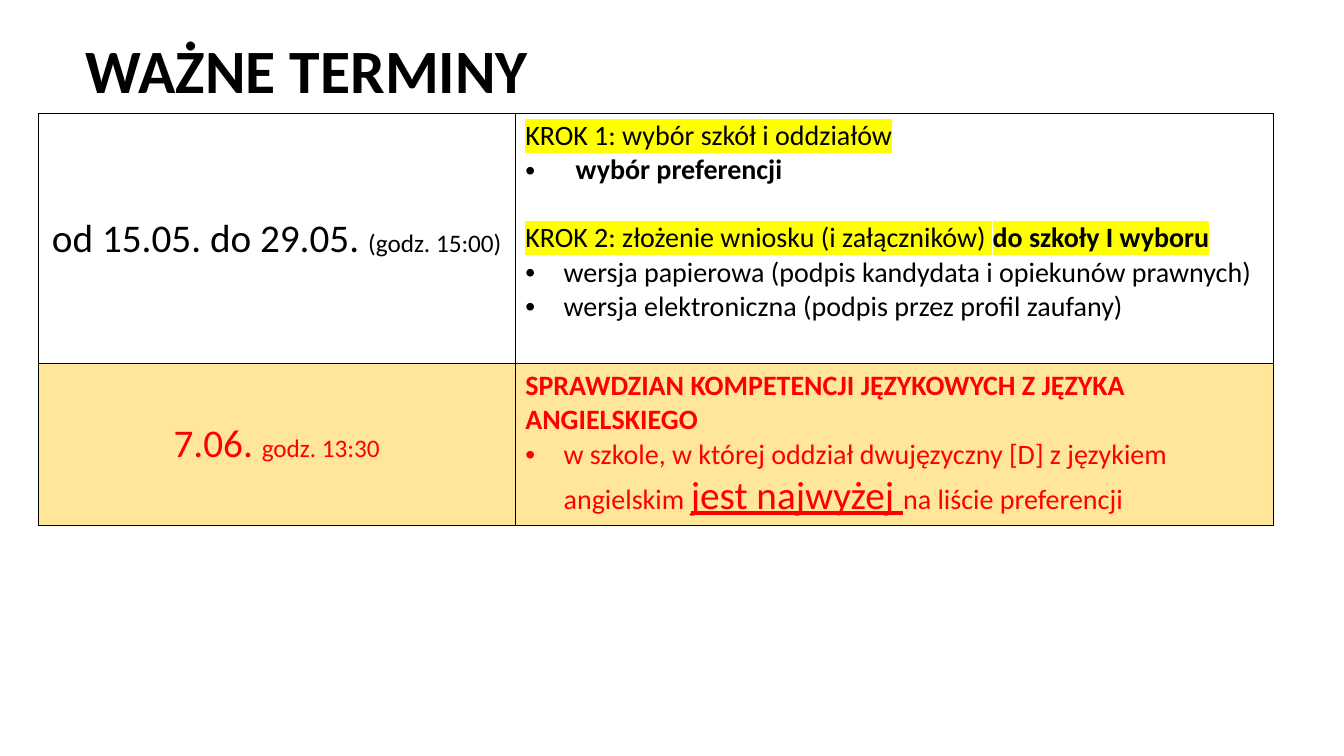
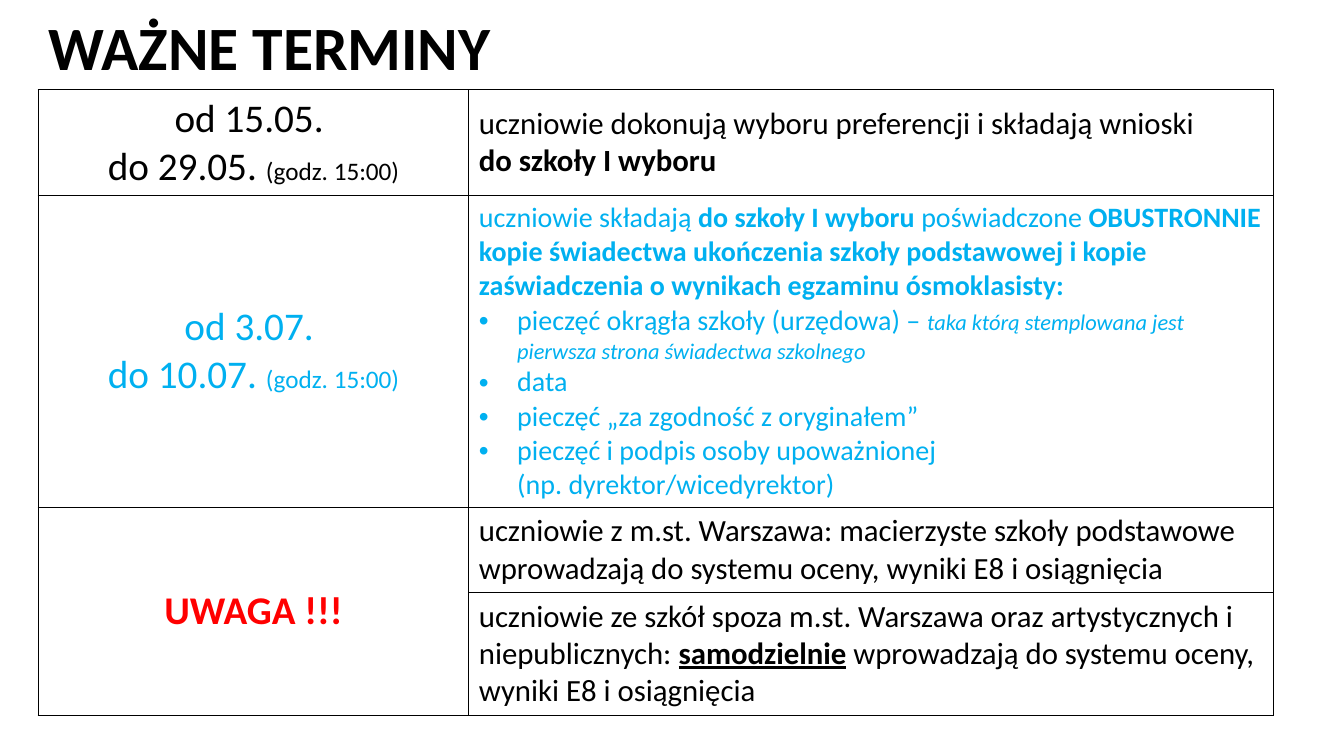
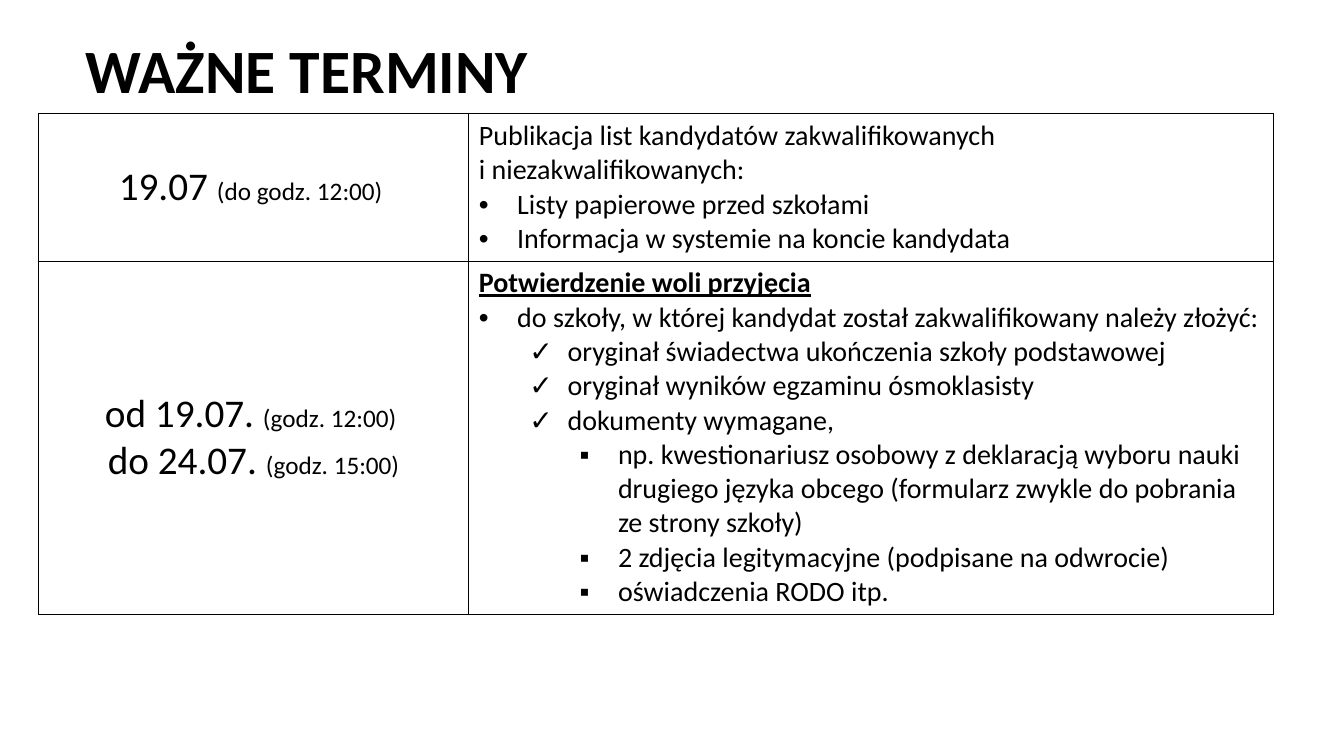
from dataclasses import dataclass

from lxml import etree
from pptx import Presentation
from pptx.dml.color import RGBColor
from pptx.enum.text import MSO_ANCHOR, PP_ALIGN
from pptx.oxml.ns import qn
from pptx.util import Inches, Pt

BLACK = RGBColor(0x00, 0x00, 0x00)
RED = RGBColor(0xFF, 0x00, 0x00)
BLUE = RGBColor(0x00, 0xB0, 0xF0)
SAND = RGBColor(0xFF, 0xE6, 0x99)
YELLOW = RGBColor(0xFF, 0xFF, 0x00)
LEFT, CENTER = PP_ALIGN.LEFT, PP_ALIGN.CENTER
TOP, MIDDLE = MSO_ANCHOR.TOP, MSO_ANCHOR.MIDDLE
FONT = "Calibri"
TITLE = "WAŻNE TERMINY"
TITLE_ONLY = 5
TABLE_LEFT, TABLE_WIDTH = 0.38, 12.25


@dataclass
class Para:
    """Paragraph made of (text, size, flags) runs; flags are b, i, u and h for highlight."""
    runs: list
    bullet: str = ""
    level: int = 0
    hang: float = 0.38
    before: int = 0


@dataclass
class Cell:
    """Table cell with its paragraphs and look."""
    paras: list
    color: RGBColor = BLACK
    fill: RGBColor = None
    align: PP_ALIGN = LEFT
    anchor: MSO_ANCHOR = MIDDLE


def line(text, size=20, flags=""):
    """Return a paragraph of one run."""
    return Para([(text, size, flags)])


def item(text, bullet="•", level=0):
    """Return a bulleted paragraph of one run."""
    return Para([(text, 20, "")], bullet, level)


def date(*parts, color=BLACK, fill=None):
    """Return a date cell from alternating large and small parts."""
    runs = [(text, 18 if i % 2 else 28, "") for i, text in enumerate(parts)]
    return Cell([Para(runs)], color, fill, CENTER)


class Deck:
    """Style of the deck and its current slide."""

    def __init__(self):
        self.prs = Presentation()
        self.prs.slide_width, self.prs.slide_height = Inches(13.33), Inches(7.5)
        self.s = None

    def slide(self, left=0.75, top=0):
        """Add a slide with its title."""
        self.s = self.prs.slides.add_slide(self.prs.slide_layouts[TITLE_ONLY])
        sp = self.s.shapes.title
        sp.left, sp.top = Inches(left), Inches(top)
        sp.width, sp.height = Inches(11.5), Inches(1.45)
        sp.text_frame.vertical_anchor = MIDDLE
        p = sp.text_frame.paragraphs[0]
        p.alignment, p.line_spacing = LEFT, 0.9
        self.run(p, TITLE, 44, "b", BLACK)

    def run(self, p, text, size, flags, color):
        """Add a run, turning newlines into line breaks."""
        for i, part in enumerate(text.split("\n")):
            if i:
                p.add_line_break()
            if not part:
                continue
            r = p.add_run()
            r.text = part
            font = r.font
            font.name, font.size = FONT, Pt(size)
            font.bold, font.italic, font.underline = (f in flags for f in "biu")
            font.color.rgb = color
            if "h" in flags:
                mark = etree.Element(qn("a:highlight"))
                etree.SubElement(mark, qn("a:srgbClr"), val=str(YELLOW))
                r._r.get_or_add_rPr().find(qn("a:solidFill")).addnext(mark)

    def paragraph(self, p, para, cell):
        """Fill one paragraph of a cell."""
        p.alignment, p.level = cell.align, para.level
        p.space_before = Pt(para.before)
        if para.bullet:
            pPr = p._p.get_or_add_pPr()
            pPr.set("marL", str(Inches(para.hang + 0.5 * para.level)))
            pPr.set("indent", str(-Inches(para.hang)))
            etree.SubElement(pPr, qn("a:buFont"), typeface="Arial")
            etree.SubElement(pPr, qn("a:buChar"), char=para.bullet)
        for text, size, flags in para.runs:
            self.run(p, text, size, flags, cell.color)

    def borders(self, target):
        """Draw thin black lines around a cell."""
        tcPr = target._tc.get_or_add_tcPr()
        for side in ("lnL", "lnR", "lnT", "lnB"):
            ln = etree.SubElement(tcPr, qn(f"a:{side}"), w=str(Pt(1)))
            fill = etree.SubElement(ln, qn("a:solidFill"))
            etree.SubElement(fill, qn("a:srgbClr"), val=str(BLACK))

    def table(self, top, date_width, heights, rows):
        """Add a two-column table; None continues the cell above."""
        frame = self.s.shapes.add_table(
            len(rows), 2, Inches(TABLE_LEFT), Inches(top),
            Inches(TABLE_WIDTH), Inches(sum(heights)))
        table = frame.table
        table.first_row = table.horz_banding = False
        for column, width in zip(table.columns, (date_width, TABLE_WIDTH - date_width)):
            column.width = Inches(width)
        for i, (height, row) in enumerate(zip(heights, rows)):
            table.rows[i].height = Inches(height)
            for j, cell in enumerate(row):
                target = table.cell(i, j)
                self.borders(target)
                if cell is None:
                    table.cell(i - 1, j).merge(target)
                else:
                    self.cell(target, cell)

    def cell(self, target, cell):
        """Fill a table cell."""
        if cell.fill is None:
            target.fill.background()
        else:
            target.fill.solid()
            target.fill.fore_color.rgb = cell.fill
        target.vertical_anchor = cell.anchor
        tf = target.text_frame
        for i, para in enumerate(cell.paras):
            self.paragraph(tf.add_paragraph() if i else tf.paragraphs[0], para, cell)


def main():
    """Build the deck."""
    deck = Deck()

    deck.slide()
    deck.table(1.13, 4.73, (2.48, 1.6), [
        (date("od 15.05. do 29.05. ", "(godz. 15:00)"),
         Cell([
             line("KROK 1: wybór szkół i oddziałów", flags="h"),
             Para([("wybór preferencji", 20, "b")], "•", hang=0.5),
             Para([("KROK 2: złożenie wniosku (i załączników) ", 20, "h"),
                   ("do szkoły I wyboru", 20, "bh")], before=24),
             item("wersja papierowa (podpis kandydata i opiekunów prawnych)"),
             item("wersja elektroniczna (podpis przez profil zaufany)"),
         ], anchor=TOP)),
        (date("7.06. ", "godz. 13:30", color=RED, fill=SAND),
         Cell([
             line("SPRAWDZIAN KOMPETENCJI JĘZYKOWYCH Z JĘZYKA ANGIELSKIEGO", flags="b"),
             Para([("w szkole, w której oddział dwujęzyczny [D] z językiem angielskim ", 20, ""),
                   ("jest najwyżej ", 28, "u"),
                   ("na liście preferencji", 20, "")], "•"),
         ], RED, SAND, anchor=TOP)),
    ])

    deck.slide(0.38, -0.22)
    deck.table(0.89, 4.27, (1.05, 3.09, 0.84, 1.22), [
        (date("od 15.05. \ndo 29.05. ", "(godz. 15:00)"),
         Cell([Para([("uczniowie dokonują wyboru preferencji i składają wnioski \n", 22, ""),
                     ("do szkoły I wyboru", 22, "b")])])),
        (date("od 3.07. \ndo 10.07. ", "(godz. 15:00)", color=BLUE),
         Cell([
             Para([("uczniowie składają ", 20, ""),
                   ("do szkoły I wyboru ", 20, "b"),
                   ("poświadczone ", 20, ""),
                   ("OBUSTRONNIE kopie świadectwa ukończenia szkoły podstawowej i kopie "
                    "zaświadczenia o wynikach egzaminu ósmoklasisty:", 20, "b")]),
             Para([("pieczęć okrągła szkoły (urzędowa) – ", 20, ""),
                   ("taka którą stemplowana jest pierwsza strona świadectwa szkolnego",
                    16, "i")], "•"),
             item("data"),
             item("pieczęć „za zgodność z oryginałem”"),
             item("pieczęć i podpis osoby upoważnionej \n(np. dyrektor/wicedyrektor)"),
         ], BLUE, anchor=TOP)),
        (Cell([line("UWAGA !!!", 28, "b")], RED, align=CENTER),
         Cell([line("uczniowie z m.st. Warszawa: macierzyste szkoły podstawowe "
                    "wprowadzają do systemu oceny, wyniki E8 i osiągnięcia", 22)])),
        (None,
         Cell([Para([("uczniowie ze szkół spoza m.st. Warszawa oraz artystycznych i "
                      "niepublicznych: ", 22, ""),
                     ("samodzielnie", 22, "bu"),
                     (" wprowadzają do systemu oceny, wyniki E8 i osiągnięcia", 22, "")])])),
    ])

    deck.slide()
    deck.table(1.13, 4.27, (1.46, 3.5), [
        (date("19.07 ", "(do godz. 12:00) "),
         Cell([
             line("Publikacja list kandydatów zakwalifikowanych \ni niezakwalifikowanych:"),
             item("Listy papierowe przed szkołami"),
             item("Informacja w systemie na koncie kandydata"),
         ])),
        (date("od 19.07. ", "(godz. 12:00) \n", "do 24.07. ", "(godz. 15:00)"),
         Cell([
             line("Potwierdzenie woli przyjęcia", flags="bu"),
             item("do szkoły, w której kandydat został zakwalifikowany należy złożyć:"),
             item("oryginał świadectwa ukończenia szkoły podstawowej", "✓", 1),
             item("oryginał wyników egzaminu ósmoklasisty", "✓", 1),
             item("dokumenty wymagane,", "✓", 1),
             item("np. kwestionariusz osobowy z deklaracją wyboru nauki drugiego języka "
                  "obcego (formularz zwykle do pobrania ze strony szkoły)", "▪", 2),
             item("2 zdjęcia legitymacyjne (podpisane na odwrocie)", "▪", 2),
             item("oświadczenia RODO itp.", "▪", 2),
         ])),
    ])

    deck.prs.save("out.pptx")


if __name__ == "__main__":
    main()
